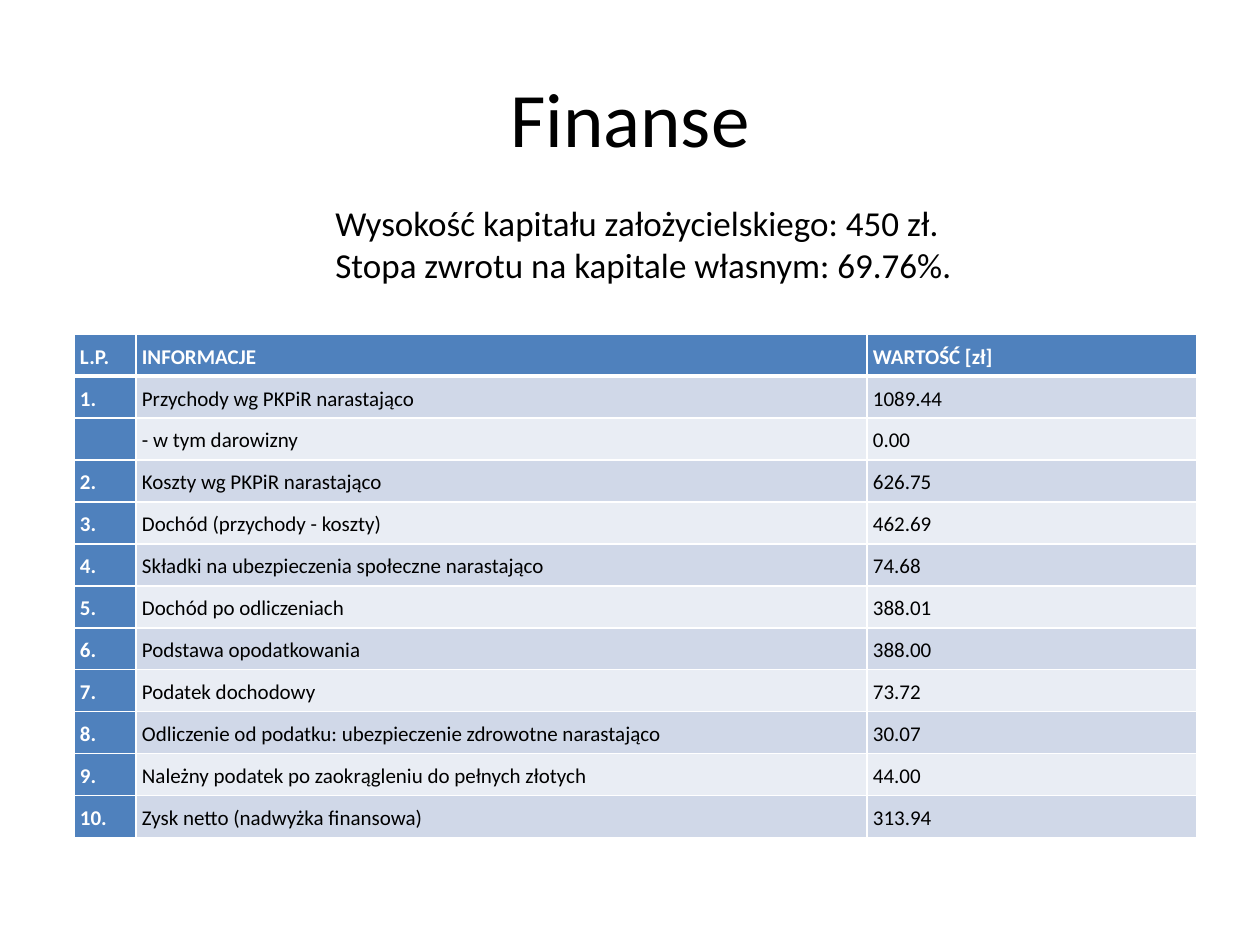
"""Builds the finance slide: a title, two key figures and a table of results."""
from lxml.etree import SubElement
from pptx import Presentation
from pptx.dml.color import RGBColor
from pptx.enum.text import MSO_ANCHOR as Anchor, MSO_AUTO_SIZE as AutoSize, PP_ALIGN as Align
from pptx.oxml.ns import qn
from pptx.util import Emu, Pt

TITLE = "Finanse"
KEY_FIGURES = [
    "Wysokość kapitału założycielskiego: 450 zł.",
    "Stopa zwrotu na kapitale własnym: 69.76%.",
]
ROWS = [
    ("L.P.", "INFORMACJE", "WARTOŚĆ [zł]"),
    ("1.", "Przychody wg PKPiR narastająco", "1089.44"),
    ("", "- w tym darowizny", "0.00"),
    ("2.", "Koszty wg PKPiR narastająco", "626.75"),
    ("3.", "Dochód (przychody - koszty)", "462.69"),
    ("4.", "Składki na ubezpieczenia społeczne narastająco", "74.68"),
    ("5.", "Dochód po odliczeniach", "388.01"),
    ("6.", "Podstawa opodatkowania", "388.00"),
    ("7.", "Podatek dochodowy", "73.72"),
    ("8.", "Odliczenie od podatku: ubezpieczenie zdrowotne narastająco", "30.07"),
    ("9.", "Należny podatek po zaokrągleniu do pełnych złotych", "44.00"),
    ("10.", "Zysk netto (nadwyżka finansowa)", "313.94"),
]
COLORS = {
    "text": "000000",
    "white": "FFFFFF",
    "header": "4F81BD",
    "odd": "D0D8E8",
    "even": "E9EDF4",
}
FONT = "Calibri"
SLIDE_SIZE = (1260, 945)
TITLE_BOX = (63, 38, 1134, 158)
FIGURES_BOX = (323, 195, 651, 97)
TABLE_CORNER = (74, 334)
COLUMN_WIDTHS = [62, 731, 330]
ROW_HEIGHT = 42
CELL_MARGIN = 6


def px(value):
    return Emu(round(value * 914400 / 126))


def write(frame, lines, size, color="text", bold=False, align=Align.JUSTIFY, spacing=None):
    frame.vertical_anchor = Anchor.MIDDLE
    for index, line in enumerate(lines):
        para = frame.add_paragraph() if index else frame.paragraphs[0]
        para.alignment = align
        para.line_spacing = spacing
        if not line:
            SubElement(para._p, qn("a:endParaRPr"), sz=str(size * 100))
            continue
        span = para.add_run()
        span.text = line
        span.font.name = FONT
        span.font.size = Pt(size)
        span.font.bold = bold
        span.font.color.rgb = RGBColor.from_string(COLORS[color])


def add_borders(cell, bottom):
    properties = cell._tc.get_or_add_tcPr()
    widths = {"a:lnL": 1, "a:lnR": 1, "a:lnT": 1, "a:lnB": bottom}
    for index, (side, width) in enumerate(widths.items()):
        line = SubElement(properties, qn(side), w=str(Pt(width)))
        fill = SubElement(line, qn("a:solidFill"))
        SubElement(fill, qn("a:srgbClr"), val=COLORS["white"])
        properties.insert(index, line)


def format_cell(cell, text, row, column):
    heading = row == 0 or column == 0
    fill = "header" if heading else ("odd" if row % 2 else "even")
    cell.fill.solid()
    cell.fill.fore_color.rgb = RGBColor.from_string(COLORS[fill])
    cell.margin_left = cell.margin_right = px(CELL_MARGIN)
    cell.margin_top = cell.margin_bottom = px(CELL_MARGIN)
    cell.vertical_anchor = Anchor.MIDDLE
    write(cell.text_frame, [text], 12, color="white" if heading else "text",
          bold=heading, spacing=1.15)
    add_borders(cell, bottom=1 if row else 3)


def add_results(page):
    size = (sum(COLUMN_WIDTHS), ROW_HEIGHT * len(ROWS))
    place = [px(value) for value in TABLE_CORNER + size]
    table = page.shapes.add_table(len(ROWS), len(COLUMN_WIDTHS), *place).table
    table.first_col = True
    for column, width in zip(table.columns, COLUMN_WIDTHS):
        column.width = px(width)
    for row, texts in enumerate(ROWS):
        table.rows[row].height = px(ROW_HEIGHT)
        for column, text in enumerate(texts):
            format_cell(table.cell(row, column), text, row, column)


def main():
    deck = Presentation()
    deck.slide_width, deck.slide_height = map(px, SLIDE_SIZE)
    page = deck.slides.add_slide(deck.slide_layouts[5])

    title = page.shapes.title
    title.left, title.top, title.width, title.height = map(px, TITLE_BOX)
    write(title.text_frame, [TITLE], 44, align=Align.CENTER)

    add_results(page)

    figures = page.shapes.add_textbox(*map(px, FIGURES_BOX)).text_frame
    figures.word_wrap = False
    figures.auto_size = AutoSize.SHAPE_TO_FIT_TEXT
    write(figures, KEY_FIGURES, 20)

    deck.save("out.pptx")


if __name__ == "__main__":
    main()
